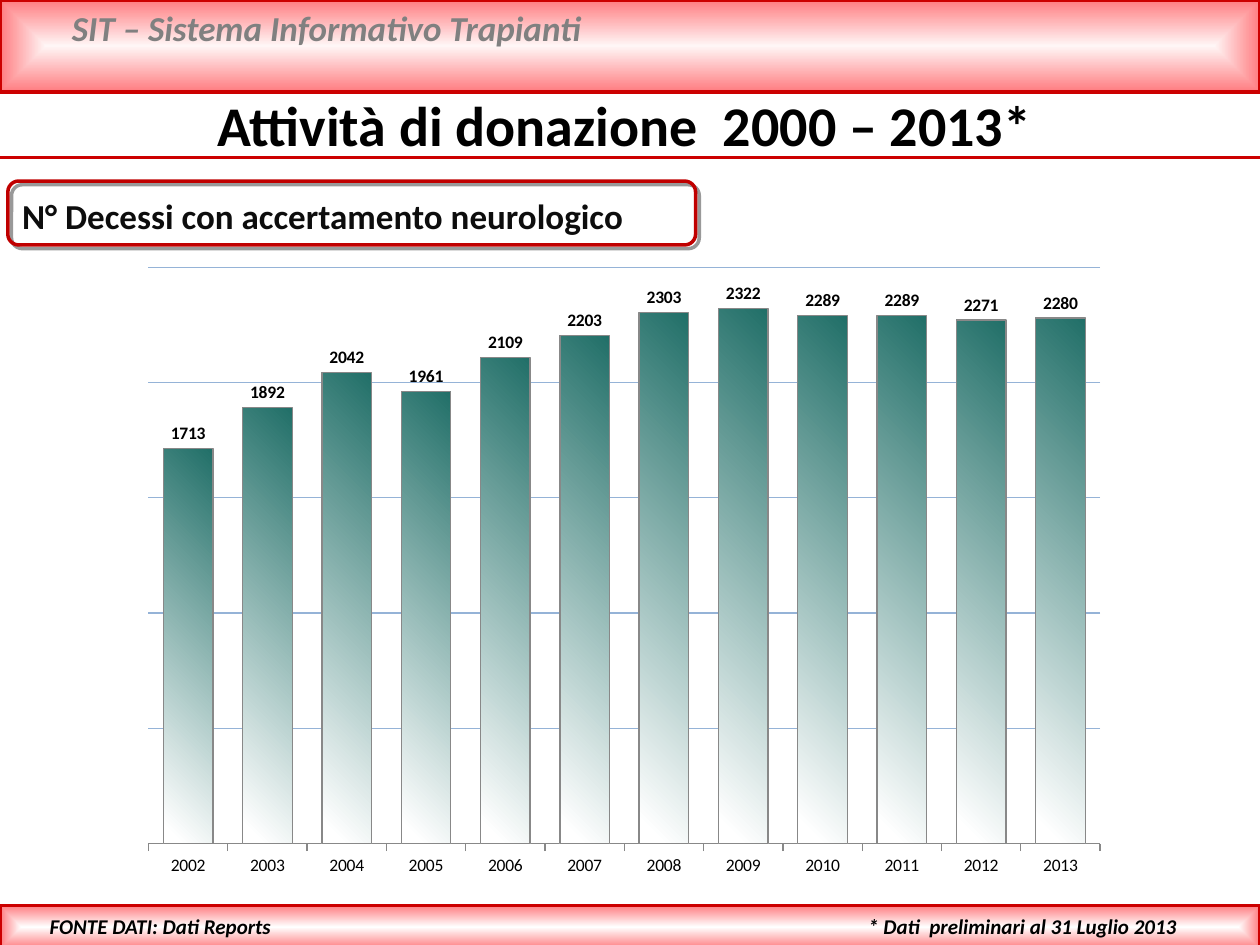
from lxml import etree
from pptx import Presentation
from pptx import util as u
from pptx.chart.data import CategoryChartData
from pptx.dml.color import RGBColor
from pptx.enum import chart as ch, shapes, text
from pptx.oxml import parse_xml
from pptx.oxml.ns import nsdecls, qn

COLORS = {
    "red": "CC0000", "dark_red": "C00000", "pink": "FF7C80", "blush": "FFF6F6",
    "white": "FFFFFF", "black": "000000", "ink": "0D0D0D", "gray": "808080",
    "green": "216F68", "outline": "888888", "grid": "95B3D7",
}
YEARS = [str(year) for year in range(2002, 2014)]
DEATHS = [1713, 1892, 2042, 1961, 2109, 2203, 2303, 2322, 2289, 2289, 2271, 2280]
CENTER = '<a:path path="rect"><a:fillToRect l="50000" t="50000" r="50000" b="50000"/></a:path>'
DIAGONAL = '<a:lin ang="8100000" scaled="0"/>'


def rgb(name):
    return RGBColor.from_string(COLORS[name])


def set_line(line, color, width):
    line.color.rgb = rgb(color)
    line.width = u.Pt(width)


def set_gradient(fill, sp_pr, start, end, shade, stop=100):
    """Put a two-colour gradient in place of the fill of sp_pr."""
    fill.background()
    stops = "".join(
        f'<a:gs pos="{pos * 1000}"><a:srgbClr val="{COLORS[name]}"/></a:gs>'
        for pos, name in ((0, start), (stop, end)))
    xml = f'<a:gradFill {nsdecls("a")} rotWithShape="1"><a:gsLst>{stops}</a:gsLst>{shade}</a:gradFill>'
    sp_pr.replace(sp_pr.find(qn("a:noFill")), parse_xml(xml))


def write(tf, content, size=12, color="black", italic=False, align="LEFT"):
    p = tf.paragraphs[0]
    p.alignment = getattr(text.PP_ALIGN, align)
    r = p.add_run()
    r.text = content
    r.font.name = Deck.font
    r.font.size = u.Pt(size)
    r.font.bold = True
    r.font.italic = italic
    r.font.color.rgb = rgb(color)


class Deck:
    font = "Calibri"

    def __init__(self, slide):
        self.s = slide

    def box(self, kind, x, y, w, h, color):
        sp = self.s.shapes.add_shape(kind, *map(u.Pt, (x, y, w, h)))
        sp.shadow.inherit = False
        sp.fill.background()
        set_line(sp.line, color, 2)
        return sp

    def band(self, y, h, middle):
        sp = self.box(shapes.MSO_SHAPE.RECTANGLE, 0, y, 720, h, "red")
        set_gradient(sp.fill, sp._element.spPr, middle, "pink", CENTER)

    def frame(self, x, y, w, h):
        sp = self.box(shapes.MSO_SHAPE.ROUNDED_RECTANGLE, x, y, w, h, "dark_red")
        sp.adjustments[0] = 0.17
        effects = sp._element.spPr.find(qn("a:effectLst"))
        effects.append(parse_xml(
            f'<a:outerShdw {nsdecls("a")} dist="38100" dir="2700000" algn="tl" rotWithShape="0">'
            f'<a:srgbClr val="{COLORS["black"]}"><a:alpha val="40000"/></a:srgbClr></a:outerShdw>'))

    def rule(self, y):
        line = self.s.shapes.add_connector(
            shapes.MSO_CONNECTOR.STRAIGHT, 0, u.Pt(y), u.Pt(720), u.Pt(y))
        set_line(line.line, "red", 2)
        etree.SubElement(line._element.spPr, qn("a:effectLst"))

    def label(self, x, y, w, h, content, wrap=True, left=7.2, top=3.6, **fmt):
        tf = self.s.shapes.add_textbox(*map(u.Pt, (x, y, w, h))).text_frame
        tf.word_wrap = wrap
        tf.auto_size = text.MSO_AUTO_SIZE.SHAPE_TO_FIT_TEXT
        tf.margin_left, tf.margin_top = u.Pt(left), u.Pt(top)
        write(tf, content, **fmt)

    def columns(self, x, y, w, h, cats, vals):
        data = CategoryChartData()
        data.categories = cats
        data.add_series("Series 1", vals)
        chart = self.s.shapes.add_chart(
            ch.XL_CHART_TYPE.COLUMN_CLUSTERED, *map(u.Pt, (x, y, w, h)), data).chart
        chart.has_legend = chart.has_title = False
        chart.font.name = self.font
        chart.font.size = u.Pt(10)
        chart.font.color.rgb = rgb("black")

        # Axes
        axis = chart.value_axis
        axis.minimum_scale, axis.maximum_scale, axis.major_unit = 0, 2500, 500
        axis.has_major_gridlines = True
        set_line(axis.major_gridlines.format.line, "grid", 0.75)
        axis.visible = False
        chart.category_axis.major_tick_mark = ch.XL_TICK_MARK.OUTSIDE
        set_line(chart.category_axis.format.line, "outline", 0.75)

        # Columns and their values
        plot = chart.plots[0]
        plot.gap_width, plot.overlap = 60, -20
        plot.vary_by_categories = False
        series = plot.series[0]
        set_line(series.format.line, "outline", 0.75)
        set_gradient(series.format.fill, series._element.find(qn("c:spPr")),
                     "green", "white", DIAGONAL, 96)
        labels = series.data_labels
        labels.show_value = True
        labels.position = ch.XL_LABEL_POSITION.OUTSIDE_END
        labels.font.name = self.font
        labels.font.size = u.Pt(10)
        labels.font.bold = True
        labels.font.color.rgb = rgb("black")

        # Inner plot area, as fractions of the chart
        area = chart._chartSpace.chart.plotArea
        for old in area.findall(qn("c:layout")):
            area.remove(old)
        places = "".join(f'<c:{k} val="{v}"/>' for k, v in (
            ("xMode", "edge"), ("yMode", "edge"),
            ("x", 0.02), ("y", 0.02), ("w", 0.96), ("h", 0.91)))
        area.insert(0, parse_xml(
            f'<c:layout {nsdecls("c")}><c:manualLayout><c:layoutTarget val="inner"/>'
            f'{places}</c:manualLayout></c:layout>'))


def main():
    prs = Presentation()
    prs.slide_width, prs.slide_height = u.Pt(720), u.Pt(540)
    deck = Deck(prs.slides.add_slide(prs.slide_layouts[6]))

    # Header and footer bands
    deck.band(0, 52.5, "blush")
    deck.label(34, 0, 646.5, 31.5, "SIT – Sistema Informativo Trapianti",
               size=20, color="gray", italic=True)
    deck.band(517.5, 24.5, "white")
    deck.rule(90)
    deck.label(489, 518.5, 231, 21.5, "* Dati  preliminari al 31 Luglio 2013", italic=True)
    deck.label(19.5, 518.5, 142.5, 21.5, "FONTE DATI: Dati Reports",
               wrap=False, italic=True, align="RIGHT")

    # Title and framed heading
    deck.label(0, 48, 714, 46, "Attività di donazione  2000 – 2013*", size=32, align="CENTER")
    deck.label(0, 103.5, 399.5, 36.5, "N° Decessi con accertamento neurologico",
               left=12.6, top=7.4, size=20, color="ink")
    deck.frame(4.5, 103.5, 393, 36.5)

    # Chart
    deck.columns(73.5, 145.5, 566.5, 362, YEARS, DEATHS)
    prs.save("out.pptx")


if __name__ == "__main__":
    main()
